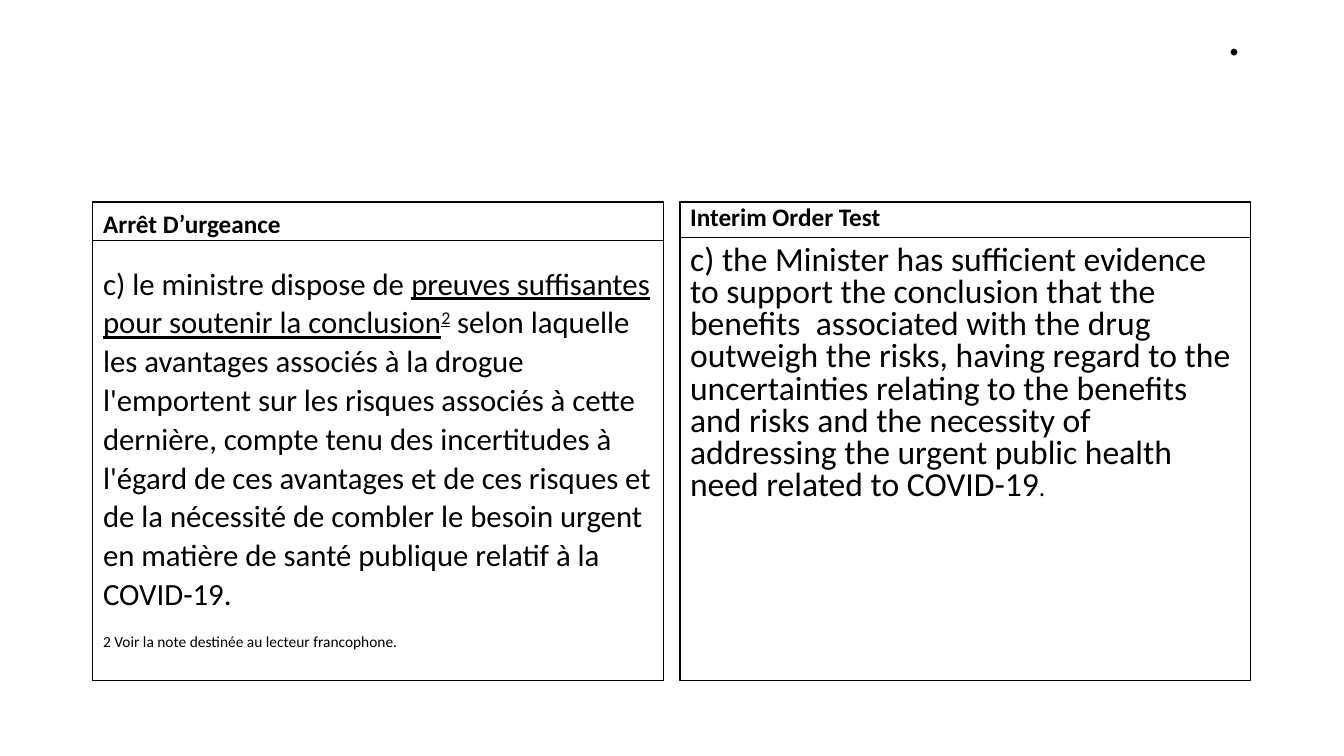
"""Builds a slide that sets a French legal test beside its English version."""
from lxml.etree import SubElement
from pptx import Presentation
from pptx.dml.color import RGBColor
from pptx.enum.shapes import MSO_CONNECTOR as Connector
from pptx.enum.text import MSO_ANCHOR as Anchor, MSO_AUTO_SIZE as AutoSize, PP_ALIGN as Align
from pptx.oxml.ns import qn
from pptx.util import Pt

BLACK = RGBColor(0, 0, 0)
WHITE = RGBColor(255, 255, 255)
PX = 914400 / 100.8


def place(shape, left, top, width, height):
    """Moves a shape to a position given in px."""
    box = {"left": left, "top": top, "width": width, "height": height}
    for name, value in box.items():
        setattr(shape, name, round(value * PX))


def add_span(para, text, size, **formats):
    """Adds a run of black Calibri text."""
    span = para.add_run()
    span.text = text
    settings = {"name": "Calibri", "size": Pt(size), "bold": False, **formats}
    for name, value in settings.items():
        setattr(span.font, name, value)
    span.font.color.rgb = BLACK
    return span


deck = Presentation()
deck.slide_width = round(1344 * PX)
deck.slide_height = round(756 * PX)
page = deck.slides.add_slide(deck.slide_layouts[3])
page.background.fill.solid()
page.background.fill.fore_color.rgb = WHITE
title, french, english = page.placeholders

place(title, 93, 35, 1159, 5)
title.text_frame.auto_size = AutoSize.NONE
title.text_frame.vertical_anchor = Anchor.MIDDLE
heading = title.text_frame.paragraphs[0]
heading.alignment = Align.RIGHT
heading.line_spacing = 0.9
add_span(heading, ".", 39.6)

french_text = [
    (1.05, 7, [("Arrêt D’urgeance", 18, {"bold": True})]),
    (1.05, 7, [
        ("c) le ministre dispose de ", 22, {}),
        ("preuves suffisantes pour soutenir la conclusion", 22, {"underline": True}),
        ("2", 22, {"underline": True}),
        (" selon laquelle les avantages associés à la drogue l'emportent sur les risques "
         "associés à cette dernière, compte tenu des incertitudes à l'égard de ces avantages "
         "et de ces risques et de la nécessité de combler le besoin urgent en matière de "
         "santé publique relatif à la COVID-19.", 22, {}),
    ]),
    (0.8, 0, [("2 Voir la note destinée au lecteur francophone.", 11, {})]),
]
english_text = [
    (0.8, 0, [("Interim Order Test", 18, {"bold": True})]),
    (0.8, 0, [
        ("c) the Minister has sufficient evidence to support the conclusion that the "
         "benefits  associated with the drug outweigh the risks, having regard to the "
         "uncertainties relating to the benefits and risks and the necessity of addressing "
         "the urgent public health need related to COVID-19", 24, {}),
        (".", 18, {}),
    ]),
]

columns = [(french, 93, 240, french_text), (english, 680, 237, english_text)]
for column, left, rule_top, paragraphs in columns:
    place(column, left, 202, 571, 479)
    column.line.color.rgb = BLACK
    column.line.width = Pt(0.75)
    frame = column.text_frame
    frame.auto_size = AutoSize.NONE
    for index, (spacing, after, spans) in enumerate(paragraphs):
        para = frame.add_paragraph() if index else frame.paragraphs[0]
        formats = {"line_spacing": spacing, "space_before": Pt(10), "space_after": Pt(after)}
        for name, value in formats.items():
            setattr(para, name, value)
        properties = para._p.get_or_add_pPr()
        properties.set("marL", "0")
        properties.set("indent", "0")
        SubElement(properties, qn("a:buNone"))
        for text, size, looks in spans:
            span = add_span(para, text, size, **looks)
            if text == "2":
                span._r.get_or_add_rPr().set("baseline", "30000")

    start, end, height = (round(value * PX) for value in (left, left + 571, rule_top))
    rule = page.shapes.add_connector(Connector.STRAIGHT, start, height, end, height)
    rule.line.color.rgb = BLACK
    rule.line.width = Pt(0.5)
    SubElement(rule._element.spPr, qn("a:effectLst"))

deck.save("out.pptx")
